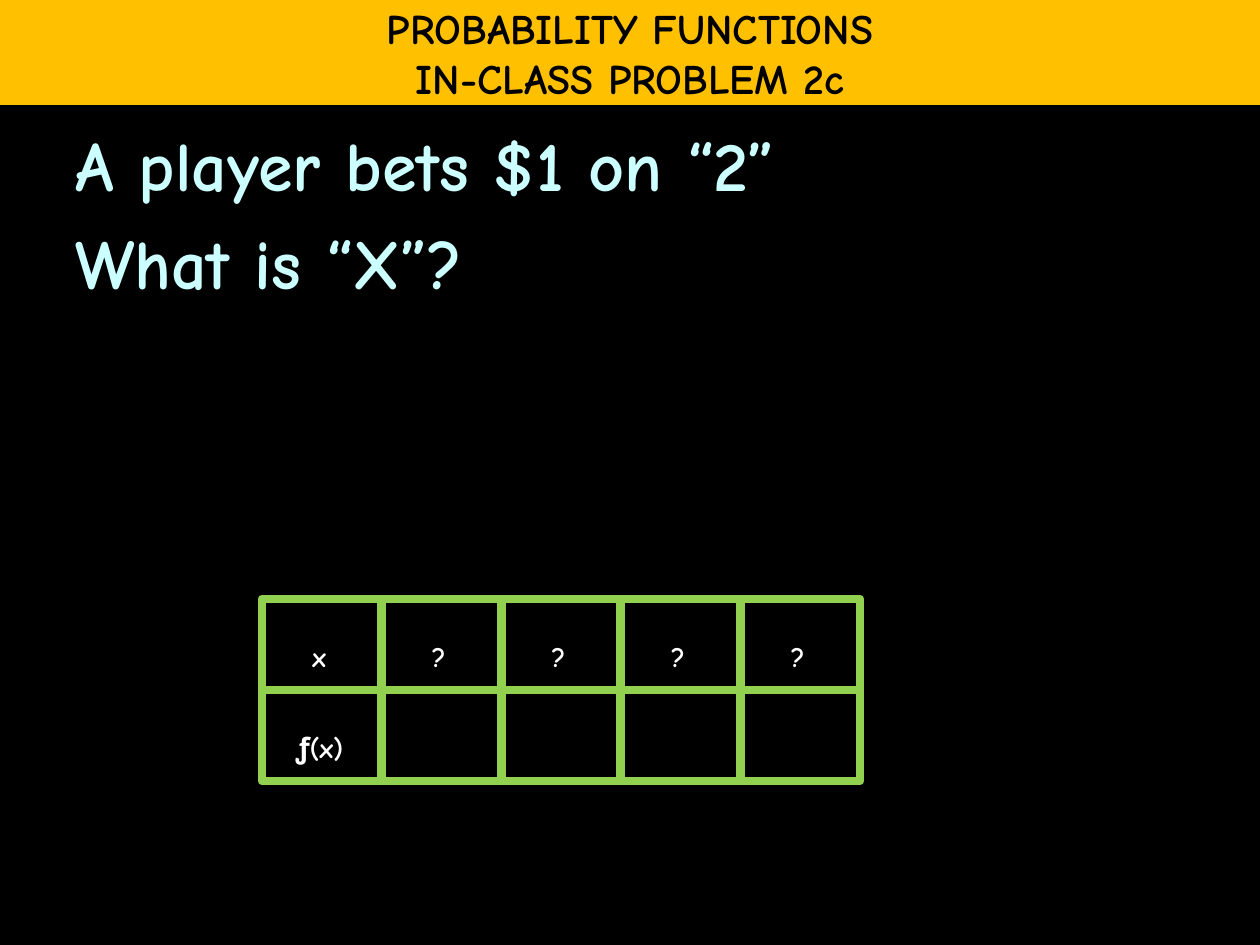
from dataclasses import dataclass

from pptx import Presentation
from pptx.dml.color import RGBColor as Rgb
from pptx.enum.shapes import MSO_SHAPE as Shape
from pptx.enum.text import MSO_ANCHOR as Anchor, MSO_AUTO_SIZE as Fit, PP_ALIGN as Align
from pptx.util import Emu, Pt


@dataclass(frozen=True)
class Theme:
    font: str = "Comic Neue"
    back: str = "000000"
    band: str = "FFC000"
    body: str = "CCFFFF"
    cell: str = "FFFFFF"
    grid: str = "92D050"
    head_size: int = 24
    body_size: int = 40
    cell_size: int = 16
    edge: int = 5


def px(n):
    return Emu(n * 914400 // 126)


def write(frame, text, size, color, align=Align.LEFT, before=0, line=None):
    for i, row in enumerate(text.split("\n")):
        para = frame.add_paragraph() if i else frame.paragraphs[0]
        para.alignment = align
        para.space_before = Pt(before)
        if line:
            para.line_spacing = Pt(line)
        run = para.add_run()
        run.text = row
        run.font.name = theme.font
        run.font.size = Pt(size)
        run.font.bold = True
        run.font.color.rgb = Rgb.from_string(color)


theme = Theme()
deck = Presentation()
deck.slide_width, deck.slide_height = px(1260), px(945)
slide = deck.slides.add_slide(deck.slide_layouts[5])
slide.background.fill.solid()
slide.background.fill.fore_color.rgb = Rgb.from_string(theme.back)

title = slide.shapes.title
title.left, title.top, title.width, title.height = px(0), px(0), px(1260), px(105)
title.fill.solid()
title.fill.fore_color.rgb = Rgb.from_string(theme.band)
frame = title.text_frame
frame.word_wrap = False
frame.auto_size = Fit.NONE
frame.vertical_anchor = Anchor.MIDDLE
write(frame, "PROBABILITY FUNCTIONS\nIN-CLASS PROBLEM 2c",
      theme.head_size, theme.back, align=Align.CENTER)

body = slide.shapes.add_textbox(px(63), px(115), px(1134), px(777))
body.text_frame.word_wrap = True
write(body.text_frame, "A player bets $1 on “2”\nWhat is “X”?",
      theme.body_size, theme.body, before=8)

rows = [["x", "?", "?", "?", "?"], ["ƒ(x)", "", "", "", ""]]
left, top, span, high = 262, 599, 598, 91
count = len(rows[0])
grid = slide.shapes.add_group_shape()
for r, row in enumerate(rows):
    for c, text in enumerate(row):
        start, end = px(left + span * c / count), px(left + span * (c + 1) / count)
        cell = grid.shapes.add_shape(Shape.RECTANGLE, int(start), px(top + high * r),
                                     int(end - start), px(high))
        cell.shadow.inherit = False
        cell.fill.background()
        cell.line.color.rgb = Rgb.from_string(theme.grid)
        cell.line.width = Pt(theme.edge)
        if text:
            frame = cell.text_frame
            frame.word_wrap = True
            frame.vertical_anchor = Anchor.TOP
            frame.margin_left, frame.margin_right = px(1), px(6)
            frame.margin_top, frame.margin_bottom = px(6), px(25)
            write(frame, text, theme.cell_size, theme.cell,
                  align=Align.CENTER, line=39)

deck.save("out.pptx")
